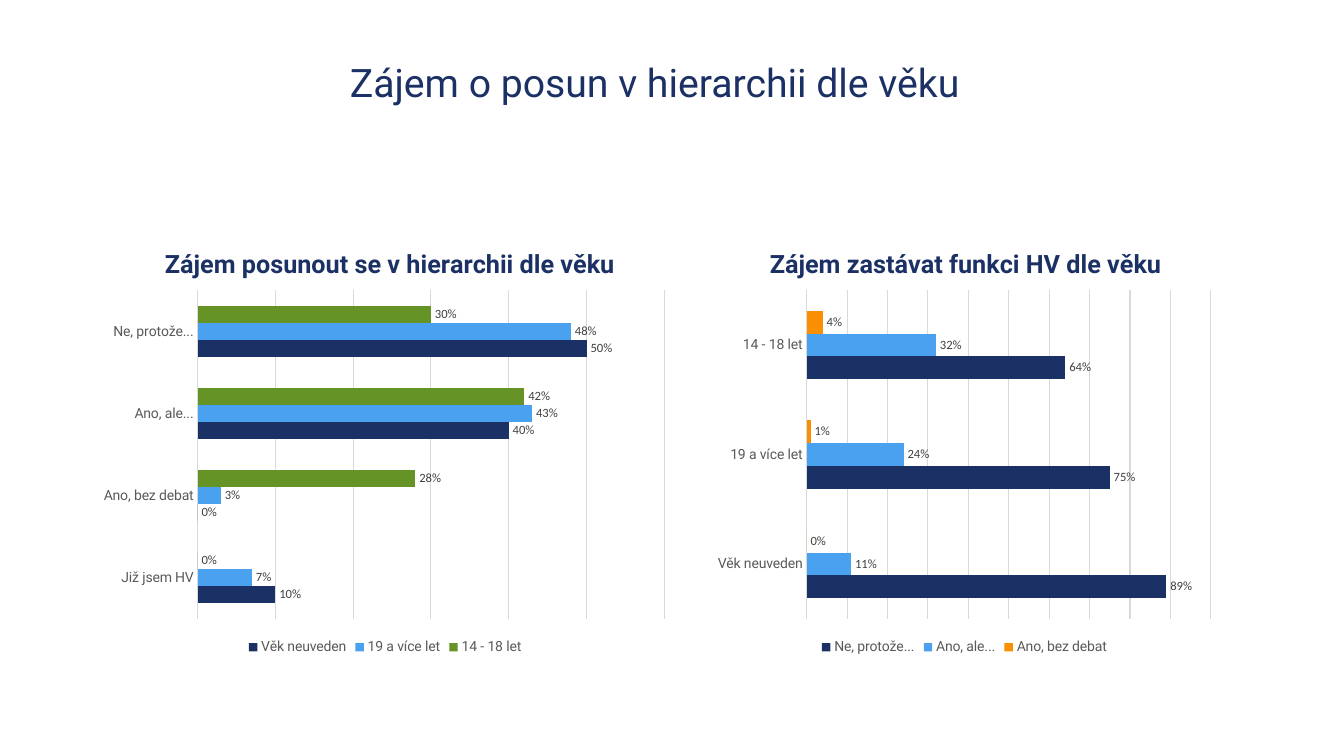
from lxml import etree
from pptx import Presentation
from pptx.chart.data import CategoryChartData
from pptx.dml.color import RGBColor
from pptx.enum.chart import (XL_CHART_TYPE, XL_LABEL_POSITION,
                             XL_LEGEND_POSITION, XL_TICK_MARK)
from pptx.enum.text import MSO_ANCHOR, PP_ALIGN
from pptx.oxml.ns import qn
from pptx.util import Inches, Pt

BAR_CLUSTERED = XL_CHART_TYPE.BAR_CLUSTERED
OUTSIDE_END = XL_LABEL_POSITION.OUTSIDE_END
LEGEND_BOTTOM = XL_LEGEND_POSITION.BOTTOM
NO_TICK = XL_TICK_MARK.NONE
MIDDLE = MSO_ANCHOR.MIDDLE
LEFT = PP_ALIGN.LEFT

NAVY, BLUE, GREEN, ORANGE = "1B3165", "4AA1EF", "659326", "FA8F01"
GRID_COLOR = "D9D9D9"
PERCENT = "###0%"

HEADING_FONT = {"name": "Roboto", "size": Pt(28), "color": NAVY}
CHART_FONT = {"name": "Calibri", "size": Pt(10), "color": "000000"}
CHART_TITLE_FONT = {"name": "Roboto", "size": Pt(18), "bold": True, "color": NAVY}
AXIS_FONT = {"name": "Roboto", "size": Pt(10), "color": "595959"}
LABEL_FONT = {"name": "Calibri", "size": Pt(9), "color": "404040"}

HEADING = "Zájem o posun v hierarchii dle věku"
HEADING_BOX = (3.37, 0.5, 6.59, 0.69)
CHART_TOP, CHART_HEIGHT = 2.21, 4.33
PLOT_TOP, PLOT_HEIGHT = 2.88, 3.26
CHART_TITLE_TOP = 2.41

# Horizontal positions are slide inches; series are (name, color, values).
CHARTS = [
    {
        "title": "Zájem posunout se v hierarchii dle věku",
        "left": 0.92, "width": 5.8, "title_left": 1.59,
        "plot_left": 1.96, "plot_width": 4.63, "maximum": 0.6,
        "categories": ["Ne, protože...", "Ano, ale...", "Ano, bez debat", "Již jsem HV"],
        "series": [
            ("14 - 18 let", GREEN, (0.3, 0.42, 0.28, 0)),
            ("19 a více let", BLUE, (0.48, 0.43, 0.03, 0.07)),
            ("Věk neuveden", NAVY, (0.5, 0.4, 0, 0.1)),
        ],
    },
    {
        "title": "Zájem zastávat funkci HV dle věku",
        "left": 7.02, "width": 5.09, "title_left": 7.59,
        "plot_left": 8.0, "plot_width": 4.01, "maximum": 1,
        "categories": ["14 - 18 let", "19 a více let", "Věk neuveden"],
        "series": [
            ("Ano, bez debat", ORANGE, (0.04, 0.01, 0)),
            ("Ano, ale...", BLUE, (0.32, 0.24, 0.11)),
            ("Ne, protože...", NAVY, (0.64, 0.75, 0.89)),
        ],
    },
]


def rgb(color):
    return RGBColor.from_string(color)


def set_font(font, values):
    for name, value in values.items():
        if name == "color":
            font.color.rgb = rgb(value)
        else:
            setattr(font, name, value)


def set_line(line, color):
    line.color.rgb = rgb(color)
    line.width = Pt(0.75)


def set_layout(parent, index, values):
    """Give a chart part a manual layout, as fractions of the chart."""
    for old_layout in parent.findall(qn("c:layout")):
        parent.remove(old_layout)
    layout = etree.Element(qn("c:layout"))
    parent.insert(index, layout)
    manual = etree.SubElement(layout, qn("c:manualLayout"))
    for name, value in values:
        etree.SubElement(manual, qn(f"c:{name}")).set("val", str(value))


def add_heading(slide):
    heading = slide.shapes.title
    heading.left, heading.top, heading.width, heading.height = map(Inches, HEADING_BOX)
    frame = heading.text_frame
    frame.text = HEADING
    frame.vertical_anchor = MIDDLE
    paragraph = frame.paragraphs[0]
    paragraph.alignment = LEFT
    paragraph.line_spacing = 0.9
    set_font(paragraph.runs[0].font, HEADING_FONT)


def format_axes(chart, maximum):
    category_axis = chart.category_axis
    category_axis.reverse_order = True
    category_axis.major_tick_mark = NO_TICK
    category_axis.minor_tick_mark = NO_TICK
    set_font(category_axis.tick_labels.font, AXIS_FONT)
    set_line(category_axis.format.line, GRID_COLOR)

    value_axis = chart.value_axis
    value_axis.visible = False
    value_axis.minimum_scale = 0
    value_axis.maximum_scale = maximum
    value_axis.major_unit = 0.1
    value_axis.has_major_gridlines = True
    set_line(value_axis.major_gridlines.format.line, GRID_COLOR)


def format_series(series, color):
    series.invert_if_negative = False
    series.format.fill.solid()
    series.format.fill.fore_color.rgb = rgb(color)
    labels = series.data_labels
    labels.show_value = True
    labels.number_format = PERCENT
    labels.number_format_is_linked = False
    labels.position = OUTSIDE_END
    set_font(labels.font, LABEL_FONT)


def add_bar_chart(slide, content):
    data = CategoryChartData(number_format=PERCENT)
    data.categories = content["categories"]
    for name, _, values in content["series"]:
        data.add_series(name, values)
    left, width = content["left"], content["width"]
    box = map(Inches, (left, CHART_TOP, width, CHART_HEIGHT))
    chart = slide.shapes.add_chart(BAR_CLUSTERED, *box, data).chart
    set_font(chart.font, CHART_FONT)

    chart.has_title = True
    title = chart.chart_title
    title.text_frame.text = content["title"]
    set_font(title.text_frame.paragraphs[0].runs[0].font, CHART_TITLE_FONT)

    chart.has_legend = True
    chart.legend.position = LEGEND_BOTTOM
    chart.legend.include_in_layout = False
    set_font(chart.legend.font, AXIS_FONT)

    format_axes(chart, content["maximum"])
    plot = chart.plots[0]
    plot.gap_width = 182
    plot.vary_by_categories = False
    for series, (_, color, _) in zip(plot.series, content["series"]):
        format_series(series, color)

    set_layout(title._element, 1, [
        ("xMode", "edge"), ("yMode", "edge"),
        ("x", (content["title_left"] - left) / width),
        ("y", (CHART_TITLE_TOP - CHART_TOP) / CHART_HEIGHT),
    ])
    plot_area = chart._chartSpace.find(".//" + qn("c:plotArea"))
    set_layout(plot_area, 0, [
        ("layoutTarget", "inner"), ("xMode", "edge"), ("yMode", "edge"),
        ("x", (content["plot_left"] - left) / width),
        ("y", (PLOT_TOP - CHART_TOP) / CHART_HEIGHT),
        ("w", content["plot_width"] / width),
        ("h", PLOT_HEIGHT / CHART_HEIGHT),
    ])


def main():
    presentation = Presentation()
    presentation.slide_width = Inches(13.33)
    presentation.slide_height = Inches(7.5)
    slide = presentation.slides.add_slide(presentation.slide_layouts[5])
    add_heading(slide)
    for content in CHARTS:
        add_bar_chart(slide, content)
    presentation.save("out.pptx")


if __name__ == "__main__":
    main()
